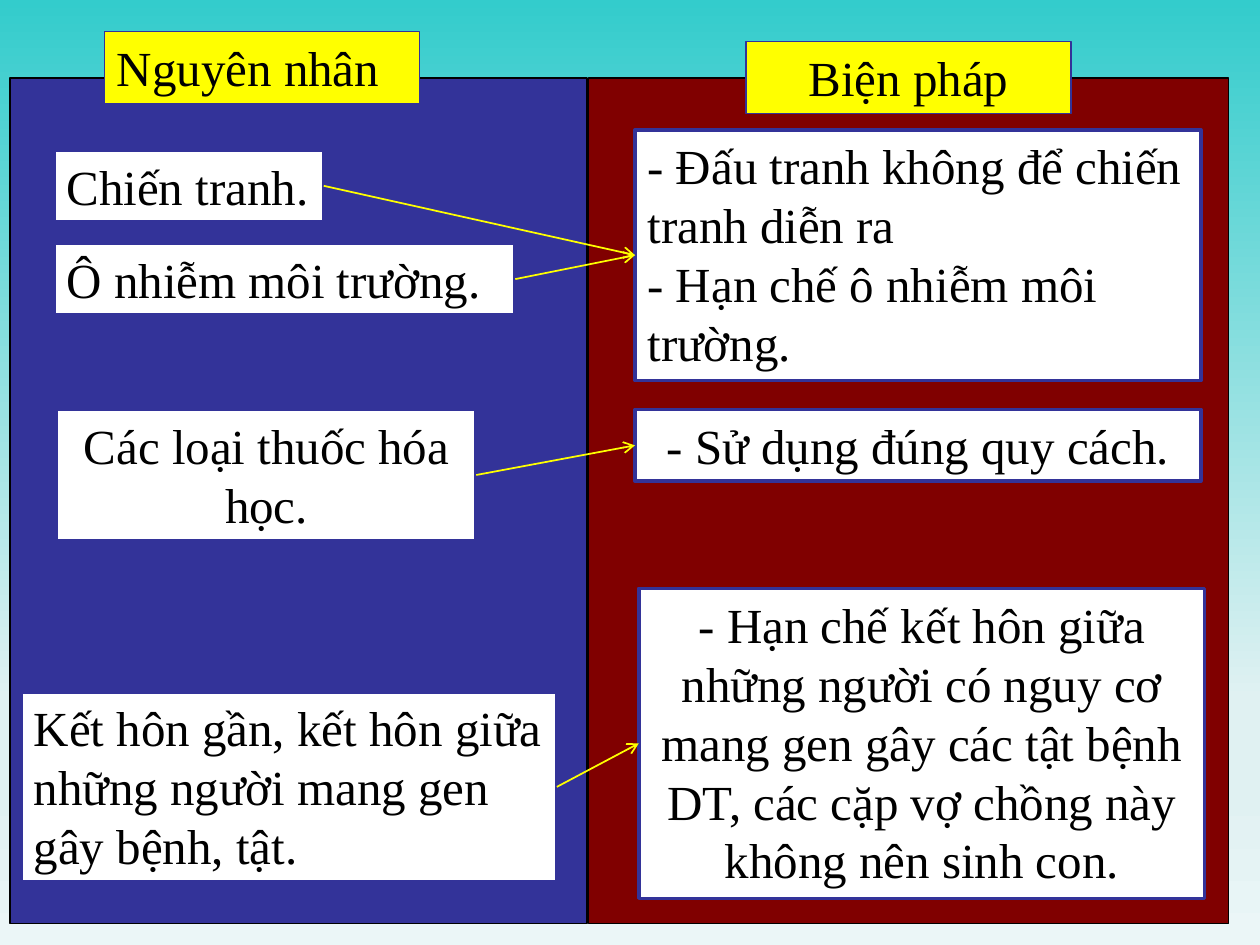
from dataclasses import dataclass

from lxml.etree import SubElement
from pptx import Presentation
from pptx.dml.color import RGBColor
from pptx.enum.shapes import MSO_CONNECTOR, MSO_SHAPE
from pptx.enum.text import MSO_ANCHOR, MSO_AUTO_SIZE, PP_ALIGN
from pptx.oxml.ns import qn
from pptx.util import Inches, Pt


@dataclass(frozen=True)
class Theme:
    font: str = "Times New Roman"
    text_size: float = 28
    black: str = "000000"
    white: str = "FFFFFF"
    blue: str = "333399"
    maroon: str = "800000"
    yellow: str = "FFFF00"
    panel_line: float = 1
    box_line: float = 2
    heading_line: float = 0.75
    arrow_line: float = 1
    background: tuple = ((0, "33CCCC"), (74, "E0F1F2"), (83, "E0F1F2"), (100, "EBF6F7"))


class SlideBuilder:
    LEFT_SIDE, RIGHT_SIDE = 1, 3

    def __init__(self, slide, theme):
        self.slide = slide
        self.theme = theme

    def background(self):
        fill = self.slide.background.fill
        fill.gradient()
        fill.gradient_angle = 270
        stops = self.slide.background._cSld.find(".//" + qn("a:gsLst"))
        for stop in list(stops):
            stops.remove(stop)
        for percent, color in self.theme.background:
            stop = SubElement(stops, qn("a:gs"), pos=str(percent * 1000))
            SubElement(stop, qn("a:srgbClr"), val=color)

    def panel(self, position, fill, line, line_width):
        shape = self.slide.shapes.add_shape(
            MSO_SHAPE.RECTANGLE, *(Inches(length) for length in position))
        shape.shadow.inherit = False
        shape.fill.solid()
        shape.fill.fore_color.rgb = RGBColor.from_string(fill)
        shape.line.color.rgb = RGBColor.from_string(line)
        shape.line.width = Pt(line_width)
        return shape

    def text_box(self, position, text, centered=False, wrap=True, heading=False):
        theme = self.theme
        fill = theme.yellow if heading else theme.white
        line_width = theme.heading_line if heading else theme.box_line
        shape = self.panel(position, fill, theme.blue, line_width)
        text_frame = shape.text_frame
        text_frame.text = text
        text_frame.word_wrap = wrap
        text_frame.auto_size = MSO_AUTO_SIZE.SHAPE_TO_FIT_TEXT
        text_frame.vertical_anchor = MSO_ANCHOR.TOP
        for paragraph in text_frame.paragraphs:
            paragraph.alignment = PP_ALIGN.CENTER if centered else PP_ALIGN.LEFT
            for run in paragraph.runs:
                run.font.name = theme.font
                run.font.size = Pt(theme.text_size)
                run.font.color.rgb = RGBColor.from_string(theme.black)
        return shape

    def arrow(self, cause, measure):
        connector = self.slide.shapes.add_connector(MSO_CONNECTOR.STRAIGHT, 0, 0, 0, 0)
        connector.begin_connect(cause, self.RIGHT_SIDE)
        connector.end_connect(measure, self.LEFT_SIDE)
        connector.line.color.rgb = RGBColor.from_string(self.theme.yellow)
        connector.line.width = Pt(self.theme.arrow_line)
        SubElement(connector.line._get_or_add_ln(), qn("a:tailEnd"), type="arrow")
        SubElement(connector._element.spPr, qn("a:effectLst"))


def main():
    presentation = Presentation()
    presentation.slide_width = Inches(10)
    presentation.slide_height = Inches(7.5)
    theme = Theme()
    builder = SlideBuilder(
        presentation.slides.add_slide(presentation.slide_layouts[6]), theme)

    # Background and the two column panels
    builder.background()
    builder.panel((0.08, 0.62, 4.58, 6.71), theme.blue, theme.black, theme.panel_line)
    builder.panel((4.67, 0.62, 5.08, 6.71), theme.maroon, theme.black, theme.panel_line)

    # Causes
    marriage = builder.text_box(
        (0.17, 5.49, 4.25, 1.51),
        "Kết hôn gần, kết hôn giữa những người mang gen gây bệnh, tật.")
    war = builder.text_box((0.43, 1.19, 2.14, 0.57), "Chiến tranh.", wrap=False)
    pollution = builder.text_box((0.43, 1.93, 3.66, 0.57), "Ô nhiễm môi trường.")
    chemicals = builder.text_box(
        (0.45, 3.25, 3.33, 1.04), "Các loại thuốc hóa học.", centered=True)

    # Measures
    limit_marriage = builder.text_box(
        (5.07, 4.67, 4.49, 2.46),
        "- Hạn chế kết hôn giữa những người có nguy cơ mang gen gây các tật bệnh DT, "
        "các cặp vợ chồng này không nên sinh con.", centered=True)
    prevent = builder.text_box(
        (5.04, 1.03, 4.49, 1.99),
        "- Đấu tranh không để chiến tranh diễn ra\n- Hạn chế ô nhiễm môi trường.")
    proper_use = builder.text_box(
        (5.04, 3.25, 4.49, 0.57), "- Sử dụng đúng quy cách.", centered=True)

    # Arrows from each cause to its measure
    for cause, measure in ((war, prevent), (pollution, prevent),
                           (chemicals, proper_use), (marriage, limit_marriage)):
        builder.arrow(cause, measure)

    # Column headings
    builder.text_box((0.83, 0.25, 2.5, 0.57), "Nguyên nhân", heading=True)
    builder.text_box((5.92, 0.33, 2.58, 0.57), "Biện pháp", centered=True, heading=True)

    presentation.save("out.pptx")


if __name__ == "__main__":
    main()
